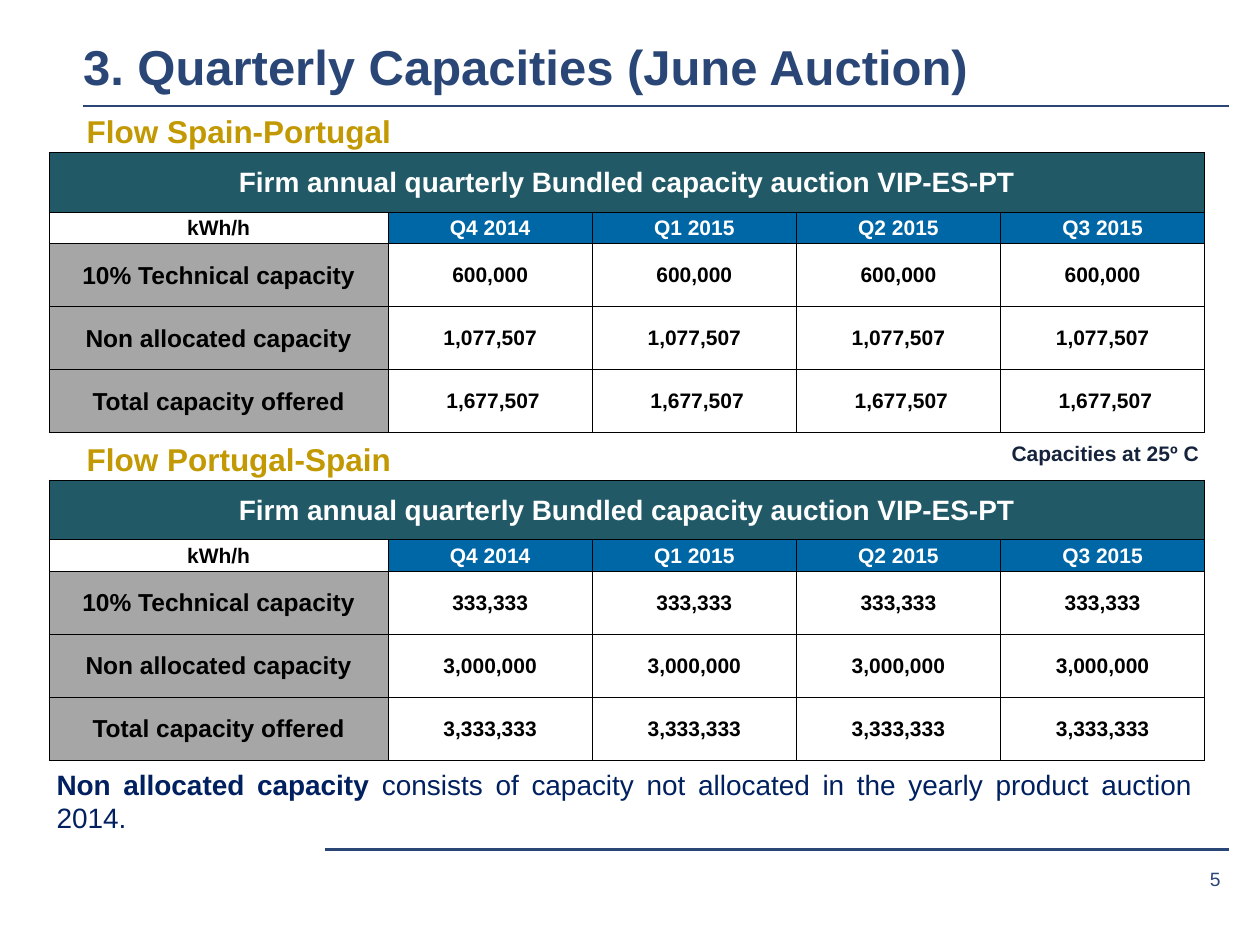
from lxml.etree import SubElement
from pptx import Presentation
from pptx.dml.color import RGBColor
from pptx.enum.shapes import MSO_CONNECTOR
from pptx.enum.text import MSO_ANCHOR, PP_ALIGN
from pptx.oxml.ns import qn
from pptx.util import Pt

COLORS = {
    "navy": "2A4677", "gold": "C29903", "ink": "15233C", "deep": "002060",
    "teal": "215967", "blue": "0067A6", "gray": "A6A6A6",
    "white": "FFFFFF", "black": "000000",
}
QUARTERS = ["Q4 2014", "Q1 2015", "Q2 2015", "Q3 2015"]
LABELS = ["10% Technical capacity", "Non allocated capacity", "Total capacity offered"]
FLOWS = [
    ("Flow Spain-Portugal", 60.5, 87.1, ["600,000", "1,077,507", " 1,677,507"]),
    ("Flow Portugal-Spain", 247.7, 274.3, ["333,333", "3,000,000", "3,333,333"]),
]


def rgb(name):
    return RGBColor.from_string(COLORS[name])


class Deck:
    font = "Arial"

    def __init__(self, slide):
        self.slide = slide

    def style(self, run, size, color, bold):
        run.font.name = self.font
        run.font.size = Pt(size)
        run.font.bold = bold
        run.font.color.rgb = rgb(color)

    def line(self, left, right, top):
        line = self.slide.shapes.add_connector(
            MSO_CONNECTOR.STRAIGHT, Pt(left), Pt(top), Pt(right), Pt(top))
        line.line.color.rgb = rgb("navy")
        line.line.width = Pt(1.5)
        SubElement(line._element.spPr, qn("a:effectLst"))

    def text(self, box, text, size, color, bold=True, align=PP_ALIGN.LEFT,
             anchor=MSO_ANCHOR.TOP, inset=True, wrap=True, after=0):
        shape = self.slide.shapes.add_textbox(*map(Pt, box))
        frame = shape.text_frame
        frame.text = text
        frame.word_wrap = wrap
        frame.vertical_anchor = anchor
        if not inset:
            frame.margin_left = frame.margin_right = 0
            frame.margin_top = frame.margin_bottom = 0
        para = frame.paragraphs[0]
        para.alignment = align
        para.space_after = Pt(after)
        self.style(para.runs[0], size, color, bold)
        return para

    def border(self, cell):
        props = cell._tc.get_or_add_tcPr()
        for side in ("lnL", "lnR", "lnT", "lnB"):
            edge = SubElement(props, qn("a:" + side), w=str(Pt(0.5)))
            fill = SubElement(edge, qn("a:solidFill"))
            SubElement(fill, qn("a:srgbClr"), val=COLORS["black"])

    def cell(self, cell, text, size, color, fill):
        self.border(cell)
        if fill:
            cell.fill.solid()
            cell.fill.fore_color.rgb = rgb(fill)
        else:
            cell.fill.background()
        cell.margin_left = cell.margin_right = cell.margin_top = Pt(0.7)
        cell.margin_bottom = 0
        cell.vertical_anchor = MSO_ANCHOR.MIDDLE
        cell.text = text
        para = cell.text_frame.paragraphs[0]
        para.alignment = PP_ALIGN.CENTER
        for run in para.runs:
            self.style(run, size, color, True)

    def table(self, left, top, title, values):
        widths = [193.7] + [116.65] * len(QUARTERS)
        heights = [34, 18] + [36] * len(LABELS)
        frame = self.slide.shapes.add_table(
            len(heights), len(widths), Pt(left), Pt(top),
            Pt(sum(widths)), Pt(sum(heights)))
        table = frame.table
        table.first_row = table.horz_banding = False
        for col, width in zip(table.columns, widths):
            col.width = Pt(width)
        for row, height in zip(table.rows, heights):
            row.height = Pt(height)
        for col in range(len(widths)):
            self.cell(table.cell(0, col), "" if col else title, 16, "white", "teal")
        table.cell(0, 0).merge(table.cell(0, len(widths) - 1))
        self.cell(table.cell(1, 0), "kWh/h", 12, "black", None)
        for col, name in enumerate(QUARTERS, 1):
            self.cell(table.cell(1, col), name, 12, "white", "blue")
        for row, (label, value) in enumerate(zip(LABELS, values), 2):
            self.cell(table.cell(row, 0), label, 14, "black", "gray")
            for col in range(1, len(widths)):
                self.cell(table.cell(row, col), value, 12, "black", "white")


def main():
    show = Presentation()
    show.slide_width, show.slide_height = Pt(720), Pt(540)
    deck = Deck(show.slides.add_slide(show.slide_layouts[6]))

    deck.line(47.5, 702, 60.5)
    deck.line(185.8, 702, 485.3)
    deck.text((643.7, 491, 56.9, 22.3), "5 ", 11, "navy", bold=False,
              align=PP_ALIGN.RIGHT, anchor=MSO_ANCHOR.MIDDLE, inset=False, wrap=False)
    deck.text((47.5, 25.9, 655.9, 28.8), "3. Quarterly Capacities (June Auction)",
              28, "navy", anchor=MSO_ANCHOR.BOTTOM, inset=False)
    for name, top, grid, values in FLOWS:
        deck.table(28.1, grid, "Firm annual quarterly Bundled capacity auction VIP-ES-PT", values)
        deck.text((42.5, top, 374.4, 29), name, 18, "gold", after=6)
    deck.text((571, 248.4, 122.4, 21.8), "Capacities at 25º C", 12, "ink", wrap=False)
    note = deck.text((25.2, 434.9, 663.1, 46), "Non allocated capacity ", 16, "deep",
                     align=PP_ALIGN.JUSTIFY)
    rest = note.add_run()
    rest.text = "consists of capacity not allocated in the yearly product auction 2014."
    deck.style(rest, 16, "deep", False)

    show.save("out.pptx")


if __name__ == "__main__":
    main()
